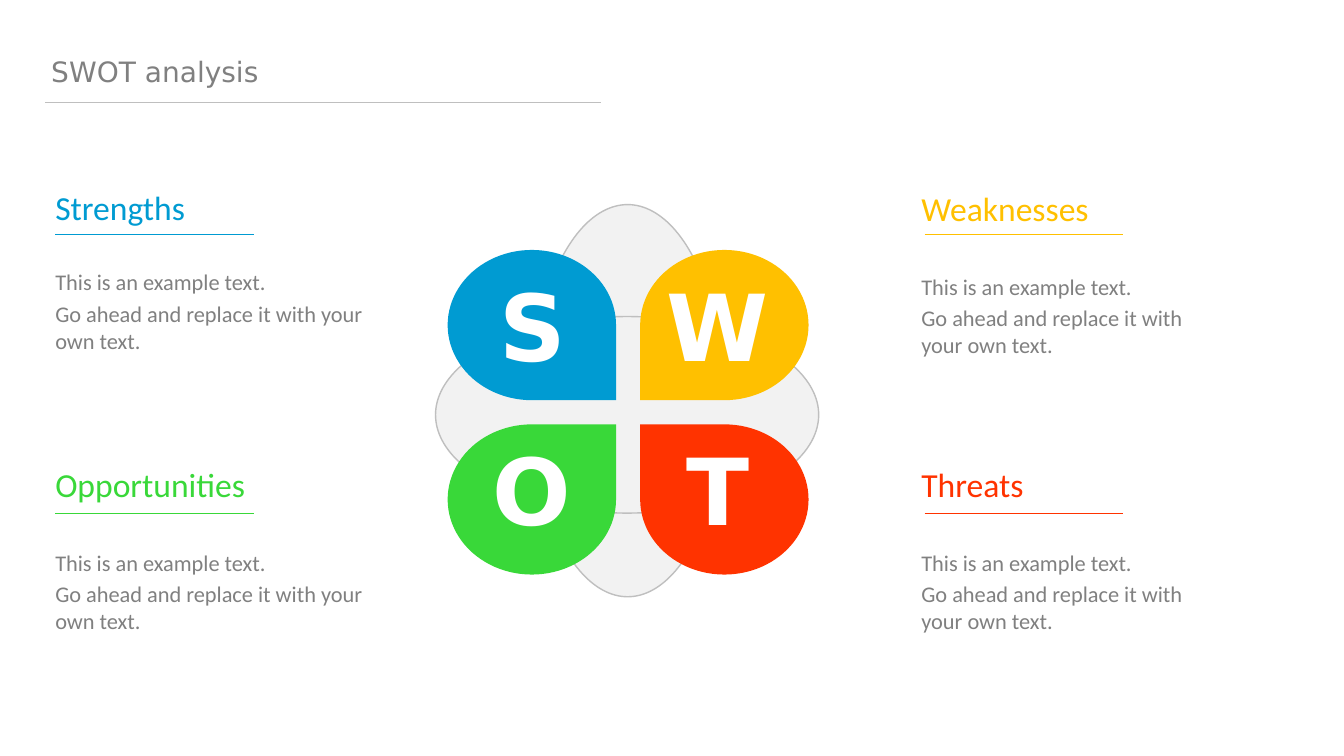
from pptx import Presentation
from pptx.dml.color import RGBColor
from pptx.enum.shapes import MSO_CONNECTOR, MSO_SHAPE
from pptx.oxml.ns import qn
from pptx.util import Pt
from lxml.etree import SubElement

PX = 9144
BLUE = RGBColor(0x00, 0x9B, 0xD2)
YELLOW = RGBColor(0xFF, 0xC0, 0x00)
GREEN = RGBColor(0x39, 0xD8, 0x39)
RED = RGBColor(0xFF, 0x33, 0x00)
WHITE = RGBColor(0xFF, 0xFF, 0xFF)
GREY = RGBColor(0x80, 0x80, 0x80)
SILVER = RGBColor(0xBF, 0xBF, 0xBF)
PALE = RGBColor(0xF2, 0xF2, 0xF2)

BODY = ["This is an example text.", "Go ahead and replace it with your own text."]


def px(*lengths):
    return [n * PX for n in lengths]


def add_box(s, x, y, w, h):
    tf = s.shapes.add_textbox(*px(x, y, w, h)).text_frame
    tf.word_wrap = True
    return tf


def add_text(tf, text, size, color, font="Calibri", bold=False, before=0, after=0):
    p = tf.paragraphs[0]
    if p.runs:
        p = tf.add_paragraph()
    p.space_before, p.space_after = Pt(before), Pt(after)
    r = p.add_run()
    r.text = text
    r.font.size, r.font.name, r.font.bold = Pt(size), font, bold
    r.font.color.rgb = color


def add_rule(s, x, y, w, color):
    line = s.shapes.add_connector(MSO_CONNECTOR.STRAIGHT, *px(x, y, x + w, y))
    line.line.color.rgb = color
    line.line.width = Pt(0.5)
    SubElement(line._element.spPr, qn("a:effectLst"))


def add_filled(s, kind, x, y, w, h, fill, outline=None):
    sp = s.shapes.add_shape(kind, *px(x, y, w, h))
    sp.shadow.inherit = False
    sp.fill.solid()
    sp.fill.fore_color.rgb = fill
    if outline is None:
        sp.line.fill.background()
    else:
        sp.line.color.rgb = outline
        sp.line.width = Pt(1)
    return sp


def add_title(s, x, y, w, h):
    add_rule(s, x + 4, y + 53, 551, SILVER)
    add_text(add_box(s, x, y, w, h), "SWOT analysis", 20, GREY, font="DejaVu Sans")


def add_flower(s, x, y, w, h):
    add_filled(s, MSO_SHAPE.OVAL, x + 95, y, 191, h, PALE, SILVER)
    add_filled(s, MSO_SHAPE.OVAL, x, y + 111, w, 195, PALE, SILVER)
    petals = [("S", BLUE, 0, 0, 42), ("W", YELLOW, 1, 0, 16),
              ("O", GREEN, 0, 1, 35), ("T", RED, 1, 1, 36)]
    for letter, color, col, row, indent in petals:
        left, top = x + 12 + 191 * col, y + 45 + 173 * row
        sp = add_filled(s, MSO_SHAPE.TEAR, left, top, 167, 149, color)
        xfrm = sp._element.spPr.xfrm
        if col == 1:
            xfrm.set("flipH", "1")
        if row == 0:
            xfrm.set("flipV", "1")
        tf = add_box(s, left + indent, top + 14 - 10 * row, 130, 121)
        add_text(tf, letter, 66, WHITE, font="DejaVu Sans", bold=True)


def add_quadrant(s, x, y, w, h, heading, color, rule_dx, rule_dy, gap):
    tf = add_box(s, x, y, w, h)
    add_text(tf, heading, 24, color, after=gap)
    for text in BODY:
        add_text(tf, text, 16, GREY, before=3.2)
    add_rule(s, x + rule_dx, y + rule_dy, 197, color)


def main():
    prs = Presentation()
    prs.slide_width, prs.slide_height = px(1333, 750)
    s = prs.slides.add_slide(prs.slide_layouts[6])
    add_title(s, 41, 49, 559, 44)
    add_flower(s, 432, 203, 380, 389)
    add_quadrant(s, 45, 181, 325, 177, "Strengths", BLUE, 10, 52, 26)
    add_quadrant(s, 904, 181, 307, 182, "Weaknesses", YELLOW, 13, 52, 29)
    add_quadrant(s, 45, 455, 356, 182, "Opportunities", GREEN, 10, 54, 29)
    add_quadrant(s, 904, 455, 307, 182, "Threats", RED, 13, 54, 29)
    prs.save("out.pptx")


if __name__ == "__main__":
    main()
